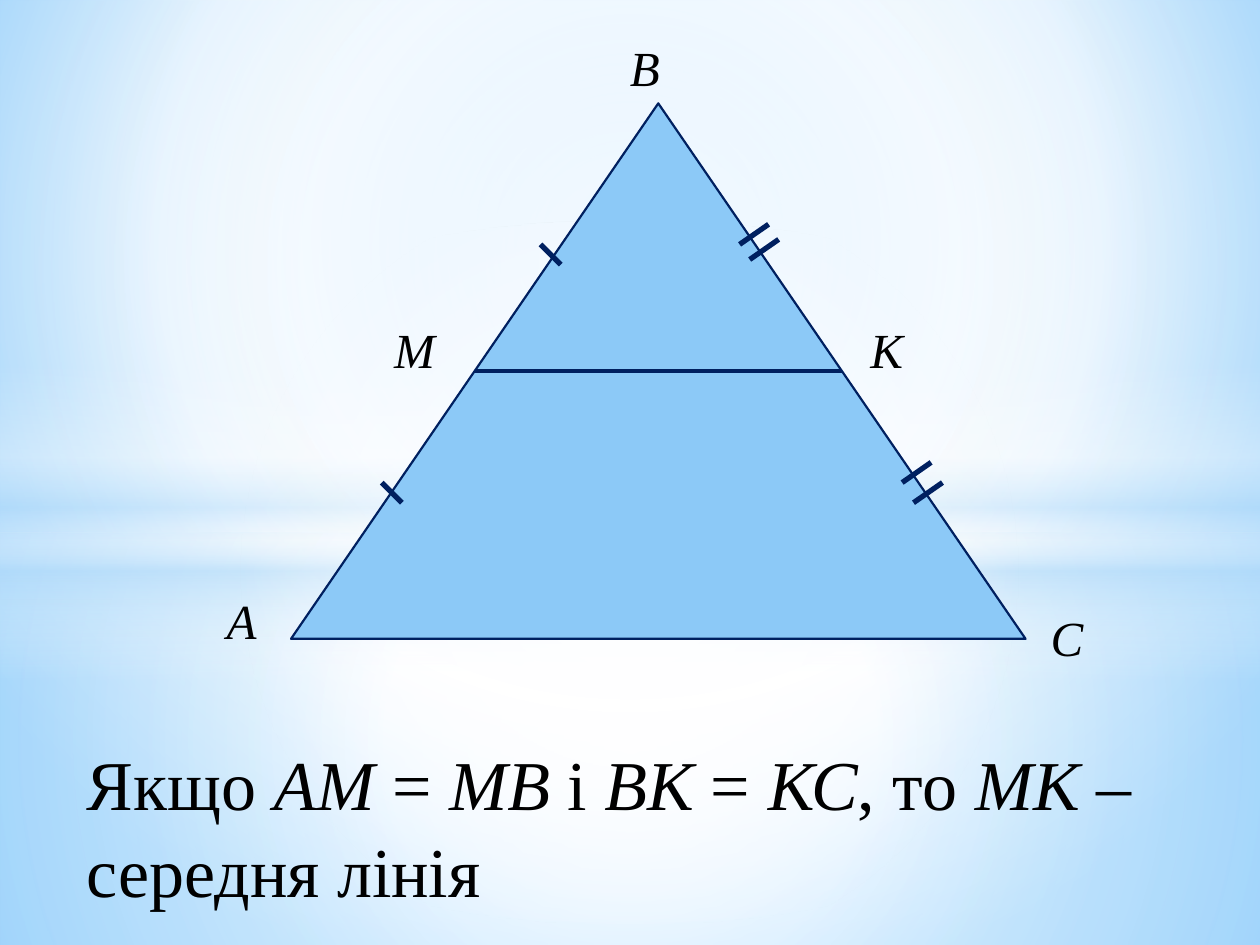
from lxml.etree import SubElement
from pptx import Presentation
from pptx.dml.color import RGBColor
from pptx.enum.shapes import MSO_CONNECTOR, MSO_SHAPE
from pptx.enum.text import MSO_ANCHOR, MSO_AUTO_SIZE
from pptx.oxml.ns import qn
from pptx.util import Inches, Pt

W, H = 10, 7.5
FONT = "Times New Roman"
BLACK = RGBColor(0x00, 0x00, 0x00)
NAVY = RGBColor(0x00, 0x20, 0x60)
SKY = RGBColor(0x8C, 0xC9, 0xF7)
WHITE = RGBColor(0xFF, 0xFF, 0xFF)
PALE = RGBColor(0xB4, 0xDC, 0xFA)
LIGHT = RGBColor(0x9E, 0xD5, 0xFF)
BLUE = RGBColor(0x5B, 0xB9, 0xFF)

CENTER = (50, 50, 50, 50)
HORIZON = 4.23
BACKDROP = [(0, LIGHT, 100), (60, WHITE, 100), (100, BLUE, 100)]
LAYERS = [
    (MSO_SHAPE.RECTANGLE, (0, HORIZON, W, H - HORIZON),
     [(0, WHITE, 91), (37, WHITE, 76), (100, PALE, 79)], CENTER),
    (MSO_SHAPE.RECTANGLE, (0, 0, W, HORIZON),
     [(0, WHITE, 89), (48, WHITE, 62), (100, PALE, 79)], CENTER),
    (MSO_SHAPE.RECTANGLE, (0, 2.9, W, 2.5),
     [(0, WHITE, 0), (29, WHITE, 30), (45, PALE, 40), (55, WHITE, 26),
      (65, PALE, 60), (100, WHITE, 0)], None),
    (MSO_SHAPE.OVAL, (0, 1.75, W, 5.58),
     [(0, WHITE, 100), (54, WHITE, 0)], CENTER),
]
STATEMENT = [
    ("Якщо ", False), ("АМ", True), (" = ", False), ("МВ", True),
    (" і ", False), ("ВК", True), (" = ", False), ("КС", True),
    (", то ", False), ("МК", True), (" – середня лінія", False),
]
TRIANGLE = (2.31, 0.82, 5.83, 4.25)
LABELS = [
    ("A", 1.7, 4.64, 0.47), ("B", 4.9, 0.25, 0.44), ("C", 8.24, 4.77, 0.46),
    ("M", 3.03, 2.49, 0.53), ("K", 6.81, 2.49, 0.46),
]
TICKS = [
    ((0.16, 0.16), [(3.03, 3.83), (4.29, 1.94)]),
    ((0.23, -0.16), [(5.87, 1.94), (5.95, 2.06), (7.16, 3.83), (7.25, 3.99)]),
]


def set_gradient(fill, element, stops, focus):
    fill.gradient()
    grad = next(element.iter(qn("a:gradFill")))
    for child in list(grad):
        grad.remove(child)
    gs_list = SubElement(grad, qn("a:gsLst"))
    for pos, color, alpha in stops:
        gs = SubElement(gs_list, qn("a:gs"), pos=str(pos * 1000))
        clr = SubElement(gs, qn("a:srgbClr"), val=str(color))
        if alpha < 100:
            SubElement(clr, qn("a:alpha"), val=str(alpha * 1000))
    if focus:
        radial = SubElement(grad, qn("a:path"), path="circle")
        sides = {k: str(v * 1000) for k, v in zip("ltrb", focus)}
        SubElement(radial, qn("a:fillToRect"), sides)
    else:
        SubElement(grad, qn("a:lin"), ang=str(90 * 60000), scaled="0")


def add_shape(s, kind, box):
    sp = s.shapes.add_shape(kind, *map(Inches, box))
    sp.shadow.inherit = False
    return sp


def add_line(s, x1, y1, x2, y2, width):
    ln = s.shapes.add_connector(MSO_CONNECTOR.STRAIGHT, *map(Inches, (x1, y1, x2, y2)))
    ln.line.color.rgb = NAVY
    ln.line.width = Pt(width)
    SubElement(ln.element.spPr, qn("a:effectLst"))


def add_text(s, box, runs, size, wrap=True):
    tf = s.shapes.add_textbox(*map(Inches, box)).text_frame
    tf.word_wrap = wrap
    tf.vertical_anchor = MSO_ANCHOR.TOP
    p = tf.paragraphs[0]
    for text, italic in runs:
        r = p.add_run()
        r.text = text
        r.font.name = FONT
        r.font.size = Pt(size)
        r.font.italic = italic
        r.font.color.rgb = BLACK
    return tf


def main():
    prs = Presentation()
    prs.slide_width, prs.slide_height = Inches(W), Inches(H)
    s = prs.slides.add_slide(prs.slide_layouts[6])

    set_gradient(s.background.fill, s.element, BACKDROP, (20, 10, 20, 60))
    for kind, box, stops, focus in LAYERS:
        sp = add_shape(s, kind, box)
        set_gradient(sp.fill, sp.element, stops, focus)
        sp.line.fill.background()

    p = add_text(s, (0.59, 5.8, 8.82, 1.3), STATEMENT, 40).paragraphs[0]
    p.line_spacing = 1.04
    p.space_before, p.space_after = Pt(3), Pt(3)

    sp = add_shape(s, MSO_SHAPE.ISOSCELES_TRIANGLE, TRIANGLE)
    sp.fill.solid()
    sp.fill.fore_color.rgb = SKY
    sp.line.color.rgb = NAVY
    sp.line.width = Pt(1.25)

    x, y, w, h = TRIANGLE
    add_line(s, x + w / 4, y + h / 2, x + w * 3 / 4, y + h / 2, 2.25)

    for name, left, top, width in LABELS:
        tf = add_text(s, (left, top, width, 0.57), [(name, True)], 28, wrap=name == "A")
        tf.auto_size = MSO_AUTO_SIZE.SHAPE_TO_FIT_TEXT

    for (dx, dy), starts in TICKS:
        for left, top in starts:
            add_line(s, left, top, left + dx, top + dy, 3)

    prs.save("out.pptx")


if __name__ == "__main__":
    main()
